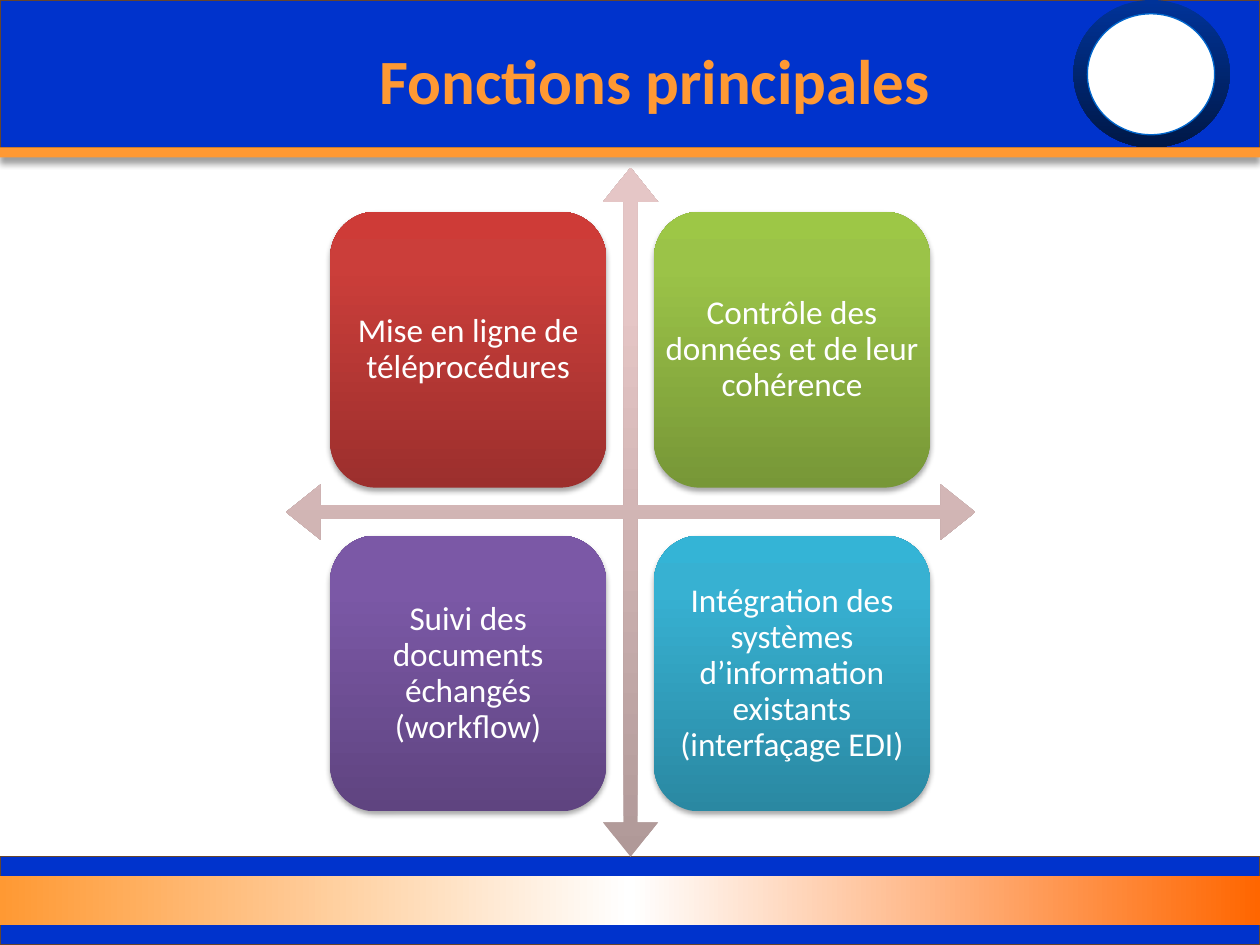
from itertools import product

from lxml.etree import SubElement as Sub
from pptx import Presentation
from pptx.dml.color import RGBColor as Rgb
from pptx.enum.shapes import MSO_SHAPE as Form
from pptx.enum.text import MSO_ANCHOR as Anchor, PP_ALIGN as Align
from pptx.oxml.ns import qn
from pptx.util import Inches, Pt

COLORS = {
    "blue": "0033CC", "brown": "67452D", "orange": "FF9933", "deep_orange": "FF6600",
    "white": "FFFFFF", "black": "000000", "ring_top": "003399", "ring_bottom": "001847",
    "disc_edge": "0066CC",
}
ARROW_STOPS = [(0, "B09998"), (80, "E5C6C6"), (100, "E6C7C6")]
FUNCTIONS = [
    ("Mise en ligne de téléprocédures", ("9C2F2D", "CB3E3A", "CE3B37")),
    ("Contrôle des données et de leur cohérence", ("779737", "9BC348", "9DC746")),
    ("Suivi des documents échangés (workflow)", ("5F4480", "7B58A6", "7C57A8")),
    ("Intégration des systèmes d’information existants (interfaçage EDI)",
     ("2A88A2", "37B1D2", "34B4D6")),
]


class Board:
    """Draws styled elements on one slide, placed on a grid of 100 columns by 75 rows."""

    font = "Calibri"

    def __init__(self, deck):
        self.slide = deck.slides.add_slide(deck.slide_layouts[6])
        self.col = deck.slide_width / 100
        self.row = deck.slide_height / 75

    def place(self, left, top, width, height):
        return (round(left * self.col), round(top * self.row),
                round(width * self.col), round(height * self.row))

    def shape(self, form, box, fill=None, edge=None, stops=None, angle=0, adjust=(), shadow=None):
        item = self.slide.shapes.add_shape(form, *self.place(*box))
        for index, value in enumerate(adjust):
            item.adjustments[index] = value
        if stops:
            self.gradient(item, stops, angle)
        else:
            item.fill.solid()
            item.fill.fore_color.rgb = Rgb.from_string(fill)
        if edge:
            item.line.color.rgb = Rgb.from_string(edge)
            item.line.width = Pt(0.75)
        else:
            item.line.fill.background()
        item.shadow.inherit = False
        if shadow:
            self.cast_shadow(item, *shadow)

    def gradient(self, item, stops, angle):
        item.fill.gradient()
        item.fill.gradient_angle = 0
        grad = item.fill._xPr.find(qn("a:gradFill"))
        grad.find(qn("a:lin")).set("ang", str(angle * 60000))
        stop_list = grad.find(qn("a:gsLst"))
        for old in list(stop_list):
            stop_list.remove(old)
        for share, color in stops:
            stop = Sub(stop_list, qn("a:gs"), pos=str(share * 1000))
            Sub(stop, qn("a:srgbClr"), val=color)

    def cast_shadow(self, item, opacity, blur, distance):
        effects = item._element.spPr.find(qn("a:effectLst"))
        outer = Sub(effects, qn("a:outerShdw"), blurRad=str(Pt(blur)), dist=str(Pt(distance)),
                    dir="5400000", algn="ctr", rotWithShape="0")
        color = Sub(outer, qn("a:srgbClr"), val=COLORS["black"])
        Sub(color, qn("a:alpha"), val=str(opacity * 1000))

    def text(self, box, words, size, color, bold=False, inset=0.1, spacing=1.0):
        frame = self.slide.shapes.add_textbox(*self.place(*box)).text_frame
        frame.word_wrap = True
        frame.vertical_anchor = Anchor.MIDDLE
        frame.margin_left = frame.margin_right = Inches(inset)
        frame.margin_top = frame.margin_bottom = Inches(min(inset, 0.08))
        frame.text = words
        line = frame.paragraphs[0]
        line.alignment = Align.CENTER
        line.line_spacing = spacing
        font = line.runs[0].font
        font.name, font.size, font.bold = self.font, Pt(size), bold
        font.color.rgb = Rgb.from_string(color)

    def card(self, box, words, shades):
        self.shape(Form.ROUNDED_RECTANGLE, box, stops=list(zip((0, 80, 100), shades)),
                   angle=270, shadow=(35, 3.1, 1.8))
        self.text(box, words, 19, COLORS["white"], inset=0.08, spacing=0.9)


def main():
    deck = Presentation()
    deck.slide_width, deck.slide_height = Inches(10), Inches(7.5)
    board = Board(deck)
    c = COLORS

    board.shape(Form.RECTANGLE, (0, 68, 100, 7), c["blue"], c["brown"])
    board.shape(Form.RECTANGLE, (0, 69.5, 100, 3.9),
                stops=[(0, c["orange"]), (50, c["white"]), (100, c["deep_orange"])])
    board.shape(Form.RECTANGLE, (0, 0, 100, 11.7), c["blue"], c["brown"])
    board.shape(Form.OVAL, (85.2, 0, 12.4, 11.7), angle=90,
                stops=[(0, c["ring_top"]), (100, c["ring_bottom"])])
    board.shape(Form.OVAL, (86.3, 1.1, 10.1, 9.6), c["white"], c["disc_edge"])
    board.shape(Form.RECTANGLE, (0, 11.7, 100, 0.8), c["orange"], shadow=(40, 4, 3))
    board.text((18, 1.6, 68, 9.4), "Fonctions principales", 36, c["orange"], bold=True)

    board.shape(Form.QUAD_ARROW, (22.7, 13.3, 54.7, 54.7), stops=ARROW_STOPS, angle=270,
                adjust=(0.02, 0.04, 0.05))
    side, pitch = 21.9, 25.7
    for (row, column), (words, shades) in zip(product(range(2), repeat=2), FUNCTIONS):
        board.card((26.2 + column * pitch, 16.8 + row * pitch, side, side), words, shades)

    deck.save("out.pptx")


if __name__ == "__main__":
    main()
